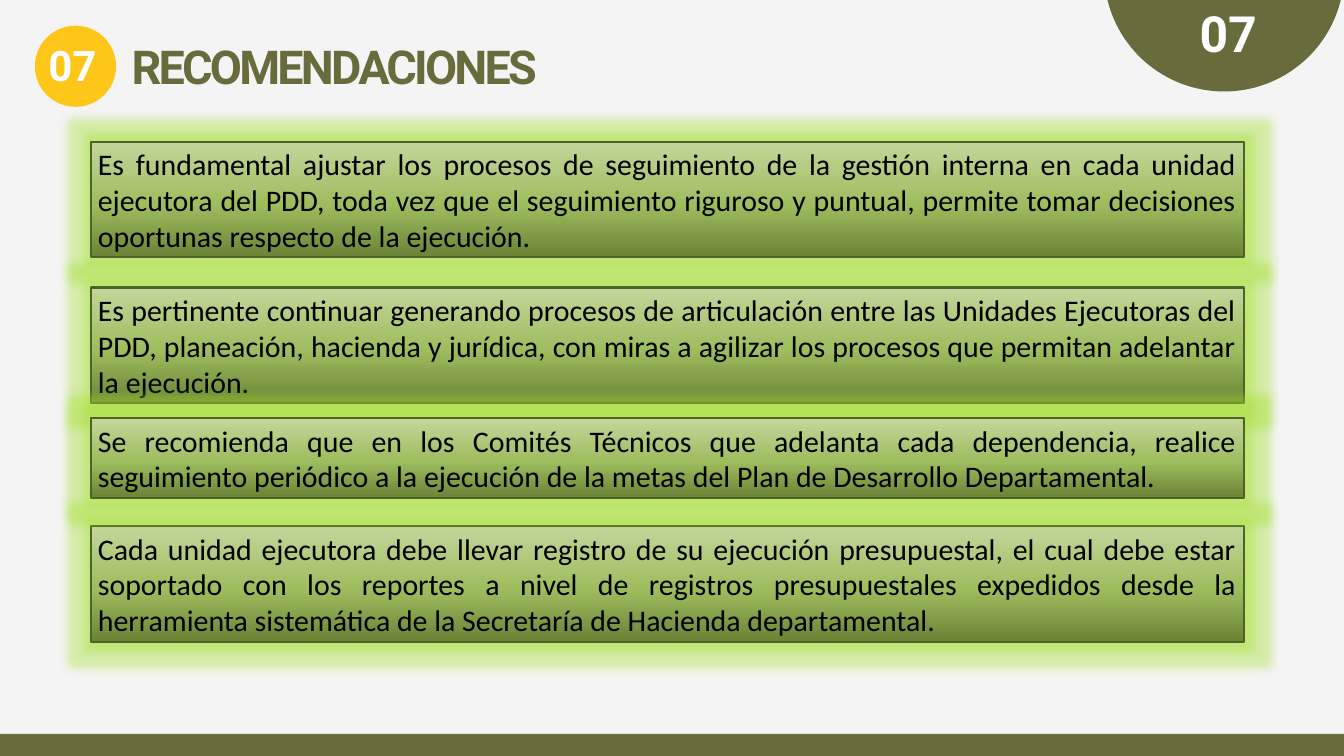
from math import acos, cos, pi, sin

from lxml import etree
from pptx import Presentation
from pptx.dml.color import RGBColor
from pptx.enum.shapes import MSO_SHAPE
from pptx.enum.text import MSO_ANCHOR, PP_ALIGN
from pptx.oxml.ns import qn
from pptx.util import Cm, Pt

RECT = MSO_SHAPE.RECTANGLE
OVAL = MSO_SHAPE.OVAL
TOP = MSO_ANCHOR.TOP
MIDDLE = MSO_ANCHOR.MIDDLE
LEFT = PP_ALIGN.LEFT
JUSTIFY = PP_ALIGN.JUSTIFY

WIDTH, HEIGHT = 50.8, 28.58
OLIVE, WHITE, YELLOW = "6A6B3C", "FFFFFF", "FFC61A"
STOPS = [(0, "6A8336"), (46, "9EBD5E"), (100, "C3D69B")]
BOXES = [
    (5.36, 4.37, "Es fundamental ajustar los procesos de seguimiento de la gestión interna en cada unidad ejecutora del PDD, toda vez que el seguimiento riguroso y puntual, permite tomar decisiones oportunas respecto de la ejecución."),
    (10.87, 4.37, "Es pertinente continuar generando procesos de articulación entre las Unidades Ejecutoras del PDD, planeación, hacienda y jurídica, con miras a agilizar los procesos que permitan adelantar la ejecución."),
    (19.89, 4.37, "Cada unidad ejecutora debe llevar registro de su ejecución presupuestal, el cual debe estar soportado con los reportes a nivel de registros presupuestales expedidos desde la herramienta sistemática de la Secretaría de Hacienda departamental."),
    (15.82, 3, "Se recomienda que en los Comités Técnicos que adelanta cada dependencia, realice seguimiento periódico a la ejecución de la metas del Plan de Desarrollo Departamental."),
]


def paint(fill, color):
    fill.solid()
    fill.fore_color.rgb = RGBColor.from_string(color)


def add_run(par, text, size, font, color, bold=False, gap=0):
    run = par.add_run()
    run.text = text
    run.font.size = Pt(size)
    run.font.name = font
    run.font.bold = bold
    paint(run.font.fill, color)
    if gap:
        run.font._element.set("spc", str(round(gap * 100)))


def add_flat(slide, kind, place, color):
    shape = slide.shapes.add_shape(kind, *map(Cm, place))
    paint(shape.fill, color)
    shape.line.fill.background()
    shape.shadow.inherit = False


def add_arc(slide, mid, drop, radius):
    rise = drop - radius
    start = acos(-rise / radius)
    steps = 60
    points = []
    for i in range(steps + 1):
        turn = start * (1 - 2 * i / steps) + pi / 2
        points.append((Cm(mid + radius * cos(turn)),
                       Cm(rise + radius * sin(turn))))
    form = slide.shapes.build_freeform(*points[0])
    form.add_line_segments(points[1:])
    shape = form.convert_to_shape()
    paint(shape.fill, OLIVE)
    shape.line.fill.background()
    shape.shadow.inherit = False


def set_label(shape, place, text, size, color, gap):
    shape.left, shape.top, shape.width, shape.height = map(Cm, place)
    frame = shape.text_frame
    frame.word_wrap = True
    frame.vertical_anchor = TOP
    frame.margin_left = frame.margin_right = frame.margin_bottom = 0
    frame.margin_top = Cm(0.03)
    par = frame.paragraphs[0]
    par.alignment = LEFT
    par.line_spacing = 1
    par.space_before = Pt(1)
    add_run(par, text, size, "Roboto", color, True, gap)


def add_label(slide, place, *style):
    set_label(slide.shapes.add_textbox(*map(Cm, place)), place, *style)


def add_color(parent, color):
    return etree.SubElement(parent, qn("a:srgbClr"), val=color)


def add_blend(shape):
    props = shape._element.spPr
    blend = etree.Element(qn("a:gradFill"), rotWithShape="1")
    stops = etree.SubElement(blend, qn("a:gsLst"))
    for pos, color in STOPS:
        stop = etree.SubElement(stops, qn("a:gs"), pos=str(pos * 1000))
        add_color(stop, color)
    etree.SubElement(blend, qn("a:lin"), ang="16200000", scaled="0")
    props.find(qn("a:prstGeom")).addnext(blend)


def add_glow(shape):
    effects = shape._element.spPr.find(qn("a:effectLst"))
    glow = etree.SubElement(effects, qn("a:glow"), rad=str(Pt(18)))
    tint = add_color(glow, "A6E033")
    etree.SubElement(tint, qn("a:alpha"), val="40000")


def add_box(slide, top, height, text):
    shape = slide.shapes.add_shape(RECT, Cm(3.45), Cm(top), Cm(43.56), Cm(height))
    paint(shape.line.fill, "4F6228")
    shape.line.width = Pt(2.25)
    shape.shadow.inherit = False
    add_blend(shape)
    add_glow(shape)
    frame = shape.text_frame
    frame.word_wrap = True
    frame.vertical_anchor = MIDDLE
    par = frame.paragraphs[0]
    par.alignment = JUSTIFY
    add_run(par, text, 32, "Calibri", "000000")


def main():
    deck = Presentation()
    deck.slide_width, deck.slide_height = Cm(WIDTH), Cm(HEIGHT)
    slide = deck.slides.add_slide(deck.slide_layouts[5])
    paint(slide.background.fill, "F4F4F4")
    add_arc(slide, 46.27, 3.46, 4.54)
    add_flat(slide, RECT, (0, 27.74, WIDTH, 0.84), OLIVE)
    add_flat(slide, OVAL, (1.32, 0.97, 3.07, 3.07), YELLOW)
    title = slide.shapes.title
    set_label(title, (45.34, 0.08, 2.46, 2.34), "07", 53.5, WHITE, -0.2)
    slide.shapes._spTree.append(title._element)
    add_label(slide, (4.98, 1.42, 17.09, 2.18), "RECOMENDACIONES", 50, OLIVE, -3)
    add_label(slide, (1.83, 1.47, 2.06, 1.98), "07", 45, WHITE, -0.2)
    for box in BOXES:
        add_box(slide, *box)
    deck.save("out.pptx")


if __name__ == "__main__":
    main()
